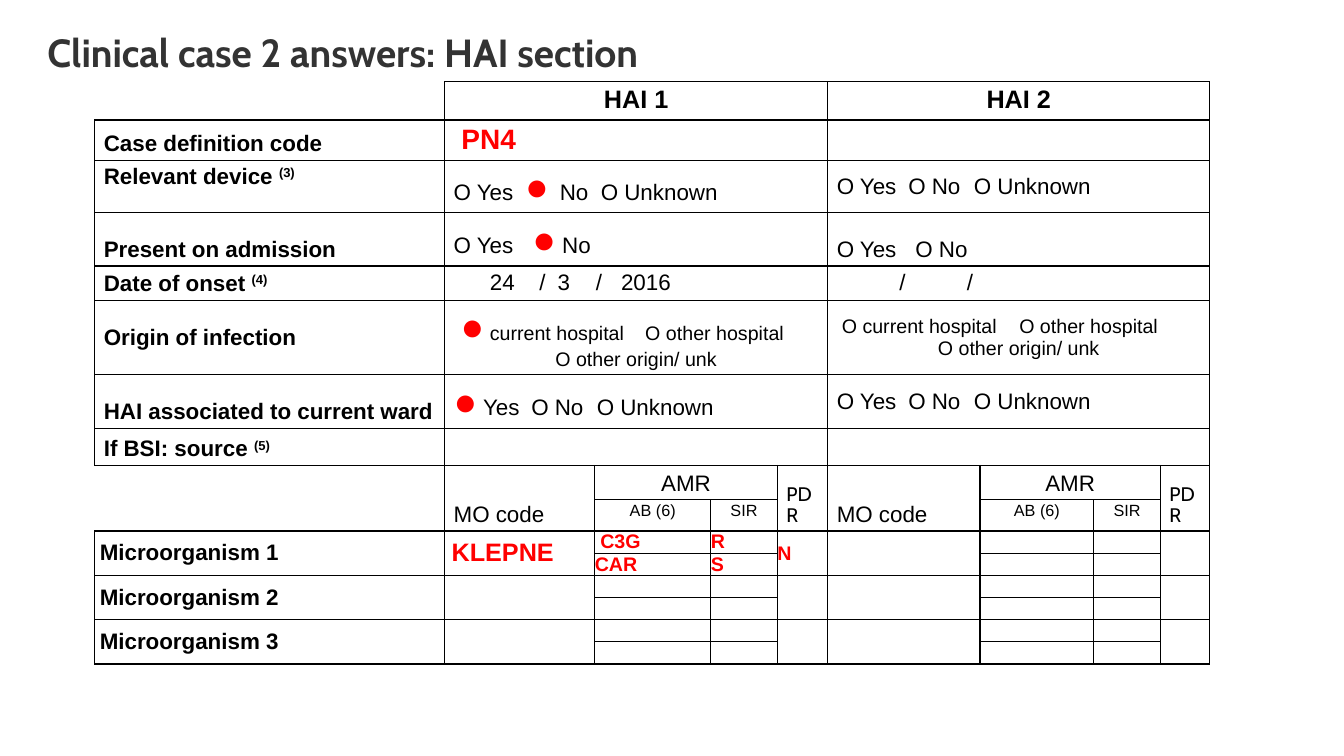
import pptx
import pptx.util
import pptx.dml.color
import pptx.enum.text
import pptx.oxml
import pptx.oxml.ns

PX = 9144  # EMU: 100 px to the inch
COLORS = {"ink": "000000", "answer": "FF0000", "heading": "333333", "paper": "FFFFFF"}
FORMATS = {
    "heading": {"name": "Cabin", "size": 28, "bold": True, "color": "heading"},
    "column": {"size": 18, "bold": True},
    "label": {"bold": True},
    "note": {"bold": True, "baseline": 30000},
    "plain": {},
    "small": {"size": 14},
    "narrow": {"name": "Cabin", "size": 14},
    "raised": {"size": 20, "baseline": 30000},
    "dot": {"size": 28, "color": "answer"},
    "code": {"size": 20, "bold": True, "color": "answer"},
    "germ": {"size": 18, "bold": True, "color": "answer"},
    "result": {"size": 14, "bold": True, "color": "answer"},
}
ANCHORS = pptx.enum.text.MSO_ANCHOR
CENTER = pptx.enum.text.PP_ALIGN.CENTER
NO_STYLE = "{2D5ABB26-0587-4C30-8999-92F81FD0307C}"

COLUMNS = [347, 149, 115, 66, 50, 151, 113, 66, 49]
ROWS = [38, 40, 52, 53, 34, 74, 53, 37, 34, 31] + [22] * 6
HAI_STARTS = (1, 5)
ROOMY, TIGHT, NONE = (9, 4), (5, 4), (0, 0)

YES_NO_UNKNOWN = [("O Yes\tO No\tO Unknown", "plain")]
# label runs, label anchor, HAI 1 lines, HAI 2 lines, anchor; a line is (runs, tab stops, alignment)
QUESTIONS = [
    ([("Case definition code", "label")], "BOTTOM",
     [([(" PN4", "code")], [], None)], [], "MIDDLE"),
    ([("Relevant device ", "label"), ("(3)", "note")], "TOP",
     [([("O Yes\t", "plain"), ("● ", "dot"), ("No\tO Unknown", "plain")], [71, 146], None)],
     [(YES_NO_UNKNOWN, [71, 136], None)], "MIDDLE"),
    ([("Present on admission", "label")], "BOTTOM",
     [([("O Yes\t", "plain"), ("●", "dot"), (" No", "plain")], [78], None)],
     [([("O Yes\tO No", "plain")], [78], None)], "BOTTOM"),
    ([("Date of onset ", "label"), ("(4)", "note")], "BOTTOM",
     [([("\t24\t/\t3\t/\t2016", "plain")], [36, 85, 103, 141, 166], None)],
     [([("\t/\t/", "plain")], [62, 129], None)], "MIDDLE"),
    ([("Origin of infection", "label")], "MIDDLE",
     [([("\t", "small"), ("●", "dot"), (" current hospital\tO other hospital", "small")],
       [7, 190], None),
      ([("O other origin/ unk", "small")], [], CENTER)],
     [([("\tO current hospital\tO other hospital", "small")], [5, 181], None),
      ([("O other origin/ unk", "small")], [], CENTER)], "MIDDLE"),
    ([("HAI associated to current ward", "label")], "BOTTOM",
     [([("●", "dot"), (" Yes\tO No\tO Unknown", "plain")], [77, 142], None)],
     [(YES_NO_UNKNOWN, [71, 136], None)], "MIDDLE"),
    ([("If BSI: source ", "label"), ("(5)", "note")], "BOTTOM", [], [], "MIDDLE"),
]
LAB_RESULTS = {(10, 2): " C3G", (10, 3): "R", (11, 2): "CAR", (11, 3): "S"}


def px(length):
    return pptx.util.Emu(length * PX)


def line(text, style, align=None):
    """One line of a cell in a single format, without tab stops."""
    return [([(text, style)], [], align)]


class FormSlide:
    def __init__(self, deck):
        self.slide = deck.slides.add_slide(deck.slide_layouts[5])
        self.base = {"name": "Arial", "size": 16, "bold": False, "color": "ink"}
        background = self.slide.background.fill
        background.solid()
        background.fore_color.rgb = pptx.dml.color.RGBColor.from_string(COLORS["paper"])

    def add_runs(self, paragraph, runs):
        for text, style in runs:
            run = paragraph.add_run()
            run.text = text
            for key, value in {**self.base, **FORMATS[style]}.items():
                if key == "color":
                    run.font.color.rgb = pptx.dml.color.RGBColor.from_string(COLORS[value])
                elif key == "baseline":
                    run._r.get_or_add_rPr().set("baseline", str(value))
                else:
                    setattr(run.font, key, pptx.util.Pt(value) if key == "size" else value)

    def title(self, text, left, top, width, height):
        heading = self.slide.shapes.title
        for side, length in zip(("left", "top", "width", "height"), (left, top, width, height)):
            setattr(heading, side, px(length))
        frame = heading.text_frame
        layout = {"margin_left": 0, "margin_top": 0, "margin_right": 0, "margin_bottom": 0,
                  "word_wrap": True, "vertical_anchor": ANCHORS.TOP,
                  "auto_size": pptx.enum.text.MSO_AUTO_SIZE.NONE}
        for key, value in layout.items():
            setattr(frame, key, value)
        paragraph = frame.paragraphs[0]
        paragraph.alignment = pptx.enum.text.PP_ALIGN.LEFT
        paragraph.line_spacing = 0.9
        self.add_runs(paragraph, [(text, "heading")])

    def grid(self, left, top):
        frame = self.slide.shapes.add_table(len(ROWS), len(COLUMNS), px(left), px(top),
                                            px(sum(COLUMNS)), px(sum(ROWS)))
        self.table = frame.table
        self.table.first_row = self.table.horz_banding = False
        self.table._tbl.tblPr.find(pptx.oxml.ns.qn("a:tableStyleId")).text = NO_STYLE
        for column, width in zip(self.table.columns, COLUMNS):
            column.width = px(width)
        for row, height in zip(self.table.rows, ROWS):
            row.height = px(height)

    def border(self, cell, sides):
        properties = cell._tc.get_or_add_tcPr()
        for position, side in enumerate(s for s in "LRTB" if s in sides):
            properties.insert(position, pptx.oxml.parse_xml(
                f'<a:ln{side} {pptx.oxml.ns.nsdecls("a")} w="12700"><a:solidFill>'
                f'<a:srgbClr val="{COLORS["ink"]}"/></a:solidFill></a:ln{side}>'))

    def entry(self, row, column, lines=(), span=(1, 1), anchor="MIDDLE", inset=NONE,
              sides="LRTB", spacing=None):
        """Fill one cell or merged block, bordered along its outer edge."""
        last_row, last_column = row + span[0] - 1, column + span[1] - 1
        cell = self.table.cell(row, column)
        if span != (1, 1):
            cell.merge(self.table.cell(last_row, last_column))
        for r in range(row, last_row + 1):
            for c in range(column, last_column + 1):
                part = self.table.cell(r, c)
                edges = {"L": c == column, "R": c == last_column,
                         "T": r == row, "B": r == last_row}
                is_origin = (r, c) == (row, column)
                part.fill.background()
                self.border(part, [s for s in sides if is_origin or edges[s]])
                part.margin_left = part.margin_right = px(inset[0])
                part.margin_top = part.margin_bottom = px(inset[1])
                ending = part.text_frame.paragraphs[0]._p.get_or_add_endParaRPr()
                ending.set("sz", "1000")
        cell.vertical_anchor = getattr(ANCHORS, anchor)
        for number, (runs, stops, align) in enumerate(lines):
            frame = cell.text_frame
            paragraph = frame.add_paragraph() if number else frame.paragraphs[0]
            if stops:
                tabs = "".join(f'<a:tab pos="{stop * PX}" algn="l"/>' for stop in stops)
                paragraph._p.get_or_add_pPr().append(pptx.oxml.parse_xml(
                    f'<a:tabLst {pptx.oxml.ns.nsdecls("a")}>{tabs}</a:tabLst>'))
            paragraph.alignment = align
            paragraph.line_spacing = spacing
            self.add_runs(paragraph, runs)


def main():
    deck = pptx.Presentation()
    deck.slide_width, deck.slide_height = px(1333), px(750)
    form = FormSlide(deck)
    form.title("Clinical case 2 answers: HAI section", 47, 33, 1128, 87)
    form.grid(94, 81)

    form.entry(0, 0, sides="RB")
    for number, start in enumerate(HAI_STARTS, 1):
        form.entry(0, start, line(f"HAI {number}", "column", CENTER), (1, 4), "TOP", ROOMY)

    for row, (label, label_anchor, first, second, anchor) in enumerate(QUESTIONS, 1):
        form.entry(row, 0, [(label, [], None)], anchor=label_anchor, inset=ROOMY)
        for start, answer in zip(HAI_STARTS, (first, second)):
            form.entry(row, start, answer, (1, 4), anchor, ROOMY)

    form.entry(8, 0, span=(2, 1), sides="RTB")
    for start in HAI_STARTS:
        form.entry(8, start, line("MO code", "plain"), (2, 1), "BOTTOM", ROOMY)
        form.entry(8, start + 1, line("AMR", "plain", CENTER), (1, 2), "BOTTOM", ROOMY)
        form.entry(8, start + 3, line("PDR", "narrow"), (2, 1), "BOTTOM", ROOMY, spacing=0.9)
        for offset, heading in enumerate(("AB (6)", "SIR"), 1):
            form.entry(9, start + offset, line(heading, "raised", CENTER), anchor="BOTTOM")

    for number, row in enumerate((10, 12, 14), 1):
        form.entry(row, 0, line(f"Microorganism {number}", "label"), (2, 1), inset=TIGHT)
        for start in HAI_STARTS:
            answered = (row, start) == (10, 1)
            form.entry(row, start, line(" KLEPNE", "germ") if answered else [], (2, 1))
            form.entry(row, start + 3, line("N", "result") if answered else [], (2, 1))
            for r in (row, row + 1):
                for c in (start + 1, start + 2):
                    result = LAB_RESULTS.get((r, c))
                    form.entry(r, c, line(result, "result") if result else [])

    deck.save("out.pptx")


if __name__ == "__main__":
    main()
